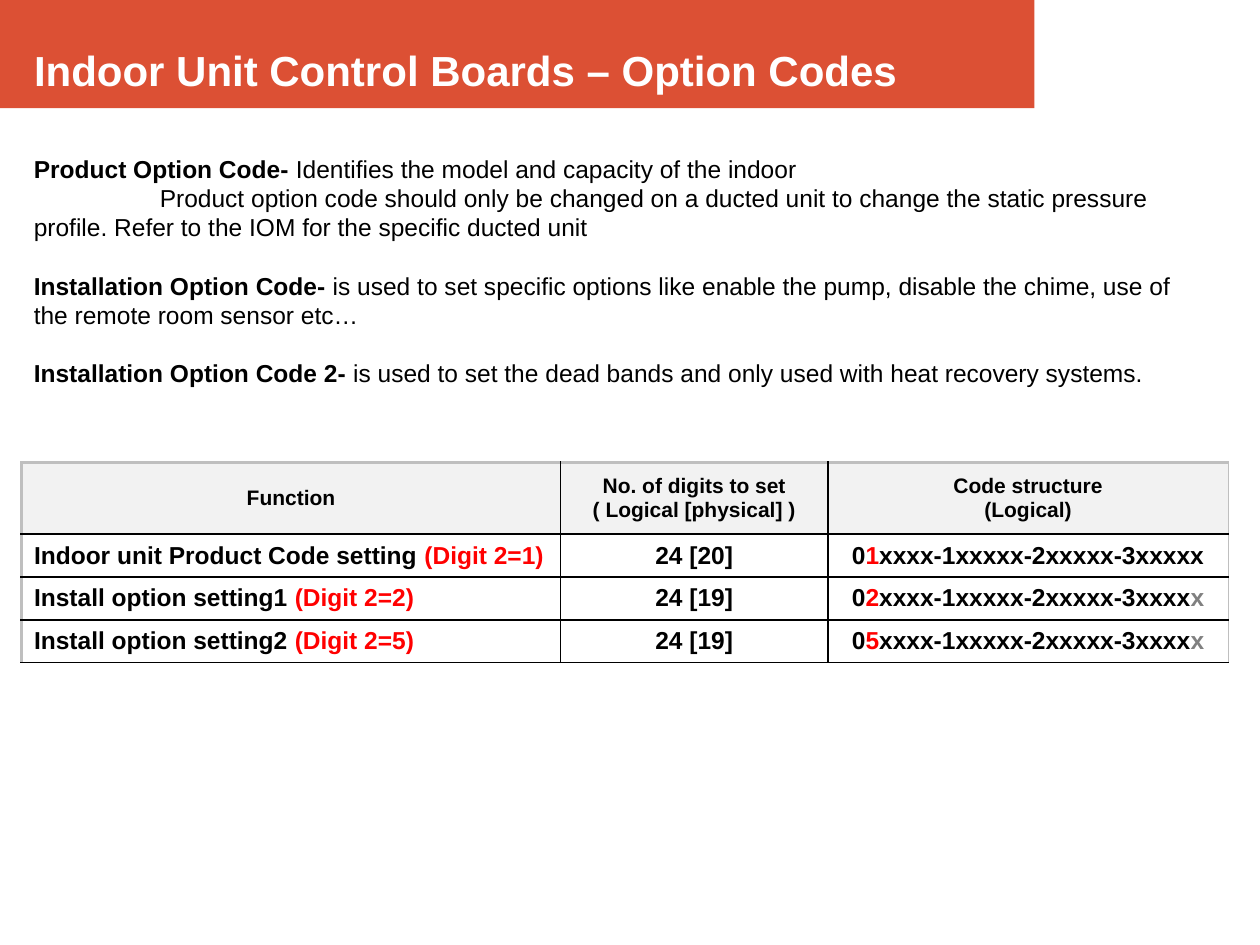
from lxml import etree
from pptx import Presentation
from pptx.dml.color import RGBColor
from pptx.enum import shapes, text
from pptx.oxml import ns
from pptx.util import Inches, Pt

FONT = "Arial"
BLACK = RGBColor(0x00, 0x00, 0x00)
WHITE = RGBColor(0xFF, 0xFF, 0xFF)
RED = RGBColor(0xFF, 0x00, 0x00)
GRAY = RGBColor(0x80, 0x80, 0x80)
EDGE_GRAY = RGBColor(0xBF, 0xBF, 0xBF)
HEADER_FILL = RGBColor(0xF2, 0xF2, 0xF2)
ORANGE = RGBColor(0xDC, 0x50, 0x34)

TITLE = "Indoor Unit Control Boards – Option Codes"

# Bold lead, explanation, first-line indent in inches, space before in points
DEFINITIONS = [
    ("Product Option Code- ", "Identifies the model and capacity of the indoor", 0, 0),
    ("", "Product option code should only be changed on a ducted unit to change "
         "the static pressure profile. Refer to the IOM for the specific ducted unit", 1, 0),
    ("Installation Option Code- ", "is used to set specific options like enable the pump, "
     "disable the chime, use of the remote room sensor etc…", 0, 16.5),
    ("Installation Option Code 2-", " is used to set the dead bands and only used with "
     "heat recovery systems.", 0, 16.5),
]

HEADERS = [
    ["Function"],
    ["No. of digits to set", "( Logical [physical] )"],
    ["Code structure", "(Logical)"],
]
# Function, value of digit 2, digits to set, rest of the code, unused last digit
SETTINGS = [
    ("Indoor unit Product Code setting ", "1", "24 [20]", "xxxx-1xxxxx-2xxxxx-3xxxxx", ""),
    ("Install option setting1 ", "2", "24 [19]", "xxxx-1xxxxx-2xxxxx-3xxxx", "x"),
    ("Install option setting2 ", "5", "24 [19]", "xxxx-1xxxxx-2xxxxx-3xxxx", "x"),
]
COLUMN_WIDTHS = [4.28, 2.12, 3.18]
ROW_HEIGHTS = [0.57] + [0.34] * len(SETTINGS)


def add_run(paragraph, words, size, color=BLACK, bold=True):
    run = paragraph.add_run()
    run.text = words
    run.font.name = FONT
    run.font.size = Pt(size)
    run.font.bold = bold
    run.font.color.rgb = color


def next_paragraph(frame, index):
    return frame.paragraphs[0] if index == 0 else frame.add_paragraph()


def add_title(slide):
    title = slide.shapes.title
    title.left, title.top, title.width, title.height = map(Inches, (0.17, 0.3, 7.83, 0.5))
    frame = title.text_frame
    frame.word_wrap = True
    frame.auto_size = text.MSO_AUTO_SIZE.SHAPE_TO_FIT_TEXT
    frame.vertical_anchor = text.MSO_ANCHOR.TOP
    frame.paragraphs[0].alignment = text.PP_ALIGN.LEFT
    add_run(frame.paragraphs[0], TITLE, 24, WHITE)

    banner = slide.shapes.add_shape(
        shapes.MSO_SHAPE.RECTANGLE, 0, 0, Inches(8.21), Inches(0.86))
    banner.shadow.inherit = False
    banner.fill.solid()
    banner.fill.fore_color.rgb = ORANGE
    banner.line.fill.background()
    title._element.addprevious(banner._element)  # behind the title


def add_definitions(slide):
    box = slide.shapes.add_textbox(*map(Inches, (0.17, 1.17, 9.5, 2.69)))
    frame = box.text_frame
    frame.word_wrap = True
    for index, (lead, explanation, indent, gap) in enumerate(DEFINITIONS):
        paragraph = next_paragraph(frame, index)
        paragraph.space_before = Pt(gap)
        if indent:
            paragraph._p.get_or_add_pPr().set("indent", str(Inches(indent)))
        if lead:
            add_run(paragraph, lead, 14)
        add_run(paragraph, explanation, 14, bold=False)


def set_borders(cell, borders):
    """Draw (side, colour, width) borders, placed ahead of the cell's fill."""
    properties = cell._tc.get_or_add_tcPr()
    for position, (side, color, width) in enumerate(borders):
        line = etree.Element(ns.qn(f"a:ln{side}"), w=str(Pt(width)))
        fill = etree.SubElement(line, ns.qn("a:solidFill"))
        etree.SubElement(fill, ns.qn("a:srgbClr"), val=str(color))
        properties.insert(position, line)


def add_settings_table(slide):
    rows = [[[[(line, BLACK)] for line in lines] for lines in HEADERS]]
    for function, digit, count, code, unused in SETTINGS:
        structure = [("0", BLACK), (digit, RED), (code, BLACK)]
        if unused:
            structure.append((unused, GRAY))
        rows.append([
            [[(function, BLACK), (f"(Digit 2={digit})", RED)]],
            [[(count, BLACK)]],
            [structure],
        ])

    table = slide.shapes.add_table(
        len(rows), len(COLUMN_WIDTHS), Inches(0.17), Inches(3.67),
        Inches(sum(COLUMN_WIDTHS)), Inches(sum(ROW_HEIGHTS))).table
    for column, width in zip(table.columns, COLUMN_WIDTHS):
        column.width = Inches(width)
    for row, height in zip(table.rows, ROW_HEIGHTS):
        row.height = Inches(height)

    last_column = len(COLUMN_WIDTHS) - 1
    for r, row in enumerate(rows):
        for c, lines in enumerate(row):
            cell = table.cell(r, c)
            cell.vertical_anchor = text.MSO_ANCHOR.MIDDLE
            cell.fill.solid()
            cell.fill.fore_color.rgb = HEADER_FILL if r == 0 else WHITE
            for index, runs in enumerate(lines):
                paragraph = next_paragraph(cell.text_frame, index)
                if r == 0 or c > 0:
                    paragraph.alignment = text.PP_ALIGN.CENTER
                for words, color in runs:
                    add_run(paragraph, words, 12 if r == 0 else 14, color)
            set_borders(cell, [
                ("L", EDGE_GRAY, 1.5) if c == 0 else ("L", BLACK, 1),
                ("R", EDGE_GRAY if c == last_column else BLACK, 1),
                ("T", EDGE_GRAY if r == 0 else BLACK, 1.5 if r < 3 else 1),
                ("B", BLACK, 1.5 if r < 2 else 1),
            ])


def main():
    presentation = Presentation()
    presentation.slide_width = Inches(10)
    presentation.slide_height = Inches(7.5)
    slide = presentation.slides.add_slide(presentation.slide_layouts[5])
    add_title(slide)
    add_settings_table(slide)
    add_definitions(slide)
    presentation.save("out.pptx")


if __name__ == "__main__":
    main()
